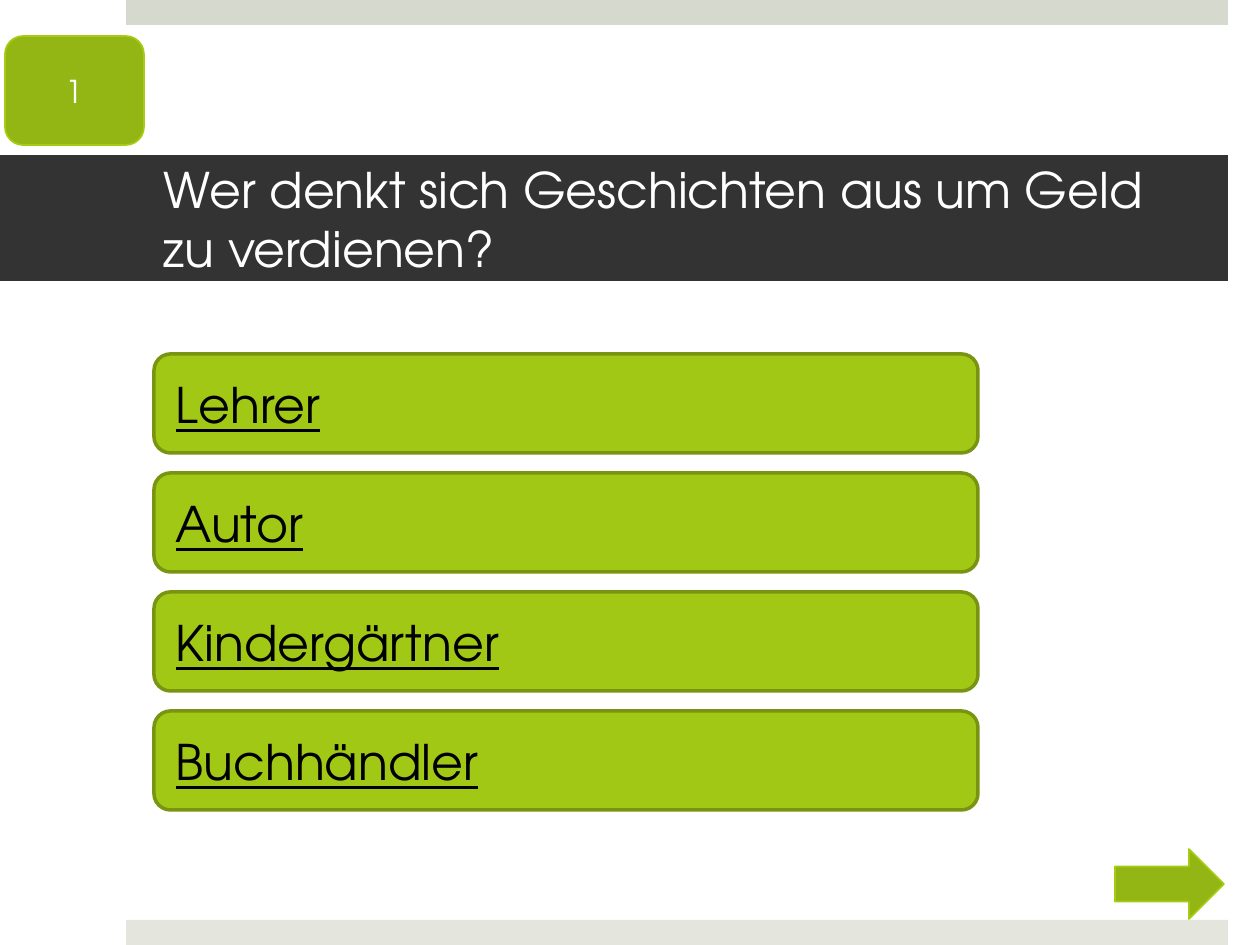
from pptx import Presentation
from pptx.dml.color import RGBColor
from pptx.enum.shapes import MSO_SHAPE
from pptx.enum.text import MSO_ANCHOR, MSO_AUTO_SIZE, PP_ALIGN
from pptx.util import Emu, Pt

PX_PER_INCH = 126
FONT = "TeX Gyre Adventor"
COLORS = {
    "top_bar": "D6D9CD",
    "bottom_bar": "E4E6DE",
    "title_band": "333333",
    "answer": "A2C816",
    "answer_line": "789410",
    "marker": "93B614",
    "marker_line": "A5CC12",
    "white": "FFFFFF",
    "black": "000000",
}
ANSWERS = ["Lehrer", "Autor", "Kindergärtner", "Buchhändler"]


def px(n):
    return Emu(round(n * 914400 / PX_PER_INCH))


def rgb(name):
    return RGBColor.from_string(COLORS[name])


def set_text(sp, text, size=28, color="white", align=PP_ALIGN.LEFT,
             underline=None, margins=(13, 6, 13, 6)):
    tf = sp.text_frame
    tf.word_wrap = True
    tf.auto_size = MSO_AUTO_SIZE.NONE
    tf.vertical_anchor = MSO_ANCHOR.MIDDLE
    tf.margin_left, tf.margin_top, tf.margin_right, tf.margin_bottom = map(px, margins)
    p = tf.paragraphs[0]
    p.alignment = align
    r = p.add_run()
    r.text = text
    r.font.name = FONT
    r.font.size = Pt(size)
    r.font.underline = underline
    r.font.color.rgb = rgb(color)


def add_block(slide, kind, box, fill, line=None, width=1):
    sp = slide.shapes.add_shape(kind, *map(px, box))
    sp.shadow.inherit = False
    sp.fill.solid()
    sp.fill.fore_color.rgb = rgb(fill)
    if line:
        sp.line.color.rgb = rgb(line)
        sp.line.width = Pt(width)
    else:
        sp.line.fill.background()
    return sp


def add_title(slide, text, box):
    sp = slide.shapes.title
    sp.left, sp.top, sp.width, sp.height = map(px, box)
    sp.fill.solid()
    sp.fill.fore_color.rgb = rgb("title_band")
    set_text(sp, text, margins=(164, 6, 38, 6))


def add_answers(slide, answers, left=154, top=354, width=824, height=99, pitch=119):
    for i, answer in enumerate(answers):
        sp = add_block(slide, MSO_SHAPE.ROUNDED_RECTANGLE,
                       (left, top + i * pitch, width, height),
                       "answer", "answer_line", 2)
        set_text(sp, answer, color="black", underline=True, margins=(17, 6, 13, 6))


def main():
    prs = Presentation()
    prs.slide_width, prs.slide_height = px(1260), px(945)
    slide = prs.slides.add_slide(prs.slide_layouts[5])

    # Bars at the top and bottom edges
    add_block(slide, MSO_SHAPE.RECTANGLE, (126, 0, 1102, 25), "top_bar")
    add_block(slide, MSO_SHAPE.RECTANGLE, (126, 920, 1102, 25), "bottom_bar")

    # Question and possible answers
    add_title(slide, "Wer denkt sich Geschichten aus um Geld zu verdienen?",
              (0, 155, 1228, 126))
    add_answers(slide, ANSWERS)

    # Question number and arrow to the next question
    number = add_block(slide, MSO_SHAPE.ROUNDED_RECTANGLE, (5, 36, 139, 109),
                       "marker", "marker_line")
    set_text(number, "1", size=18, align=PP_ALIGN.CENTER)
    add_block(slide, MSO_SHAPE.RIGHT_ARROW, (1115, 849, 109, 70),
              "marker", "marker_line")

    prs.save("out.pptx")


if __name__ == "__main__":
    main()
